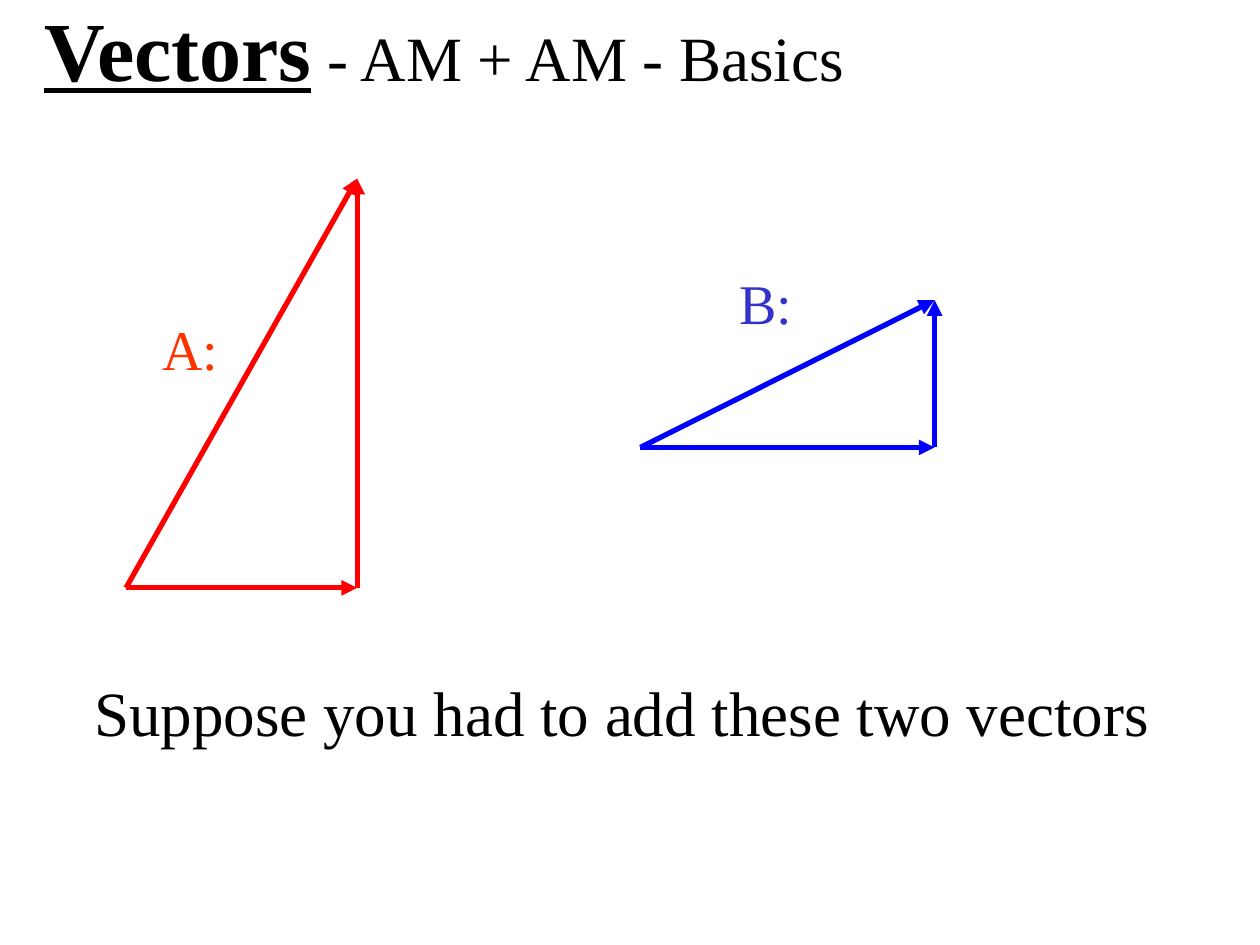
import pptx
import pptx.dml.color
import pptx.enum.shapes
import pptx.enum.text
import pptx.oxml.ns
import pptx.util
import lxml.etree
from pptx.util import Cm


def colour(hex_text):
    return pptx.dml.color.RGBColor.from_string(hex_text)


class VectorDeck:
    """Hold the style and current slide, and draw text and vectors on it."""

    font = "Times New Roman"
    line_width = 3

    def __init__(self, width, height):
        self.deck = pptx.Presentation()
        self.deck.slide_width, self.deck.slide_height = Cm(width), Cm(height)
        self.page = self.deck.slides.add_slide(self.deck.slide_layouts[6])

    def text(self, left, top, width, height, *spans):
        box = self.page.shapes.add_textbox(Cm(left), Cm(top), Cm(width), Cm(height))
        box.text_frame.word_wrap = False
        box.text_frame.auto_size = pptx.enum.text.MSO_AUTO_SIZE.SHAPE_TO_FIT_TEXT
        para = box.text_frame.paragraphs[0]
        for words, size, ink, strong in spans:
            span = para.add_run()
            span.text = words
            span.font.name = self.font
            span.font.size = pptx.util.Pt(size)
            span.font.bold = span.font.underline = strong
            span.font.color.rgb = colour(ink)

    def arrow(self, start, end, ink):
        arrow = self.page.shapes.add_connector(
            pptx.enum.shapes.MSO_CONNECTOR.STRAIGHT, *map(Cm, start + end))
        arrow.line.color.rgb = colour(ink)
        arrow.line.width = pptx.util.Pt(self.line_width)
        qn = pptx.oxml.ns.qn
        properties = arrow.element.find(qn("p:spPr"))
        outline = properties.find(qn("a:ln"))
        lxml.etree.SubElement(outline, qn("a:tailEnd"), type="triangle")
        lxml.etree.SubElement(properties, qn("a:effectLst"))

    def vector(self, start, end, ink):
        corner = (end[0], start[1])
        for tail, tip in ((start, corner), (corner, end), (start, end)):
            self.arrow(tail, tip, ink)


def main():
    slide = VectorDeck(25.4, 19.05)
    slide.text(0.64, -0.18, 16.92, 2.29,
               ("Vectors", 48, "000000", True),
               (" - AM + AM - Basics", 36, "000000", False))
    slide.vector((2.54, 11.85), (7.2, 3.6), "FF0000")
    slide.text(3.02, 6.22, 1.65, 1.6, ("A:", 32, "FF3300", False))
    slide.vector((12.91, 9.02), (18.84, 6.05), "0000FF")
    slide.text(14.66, 5.28, 1.57, 1.6, ("B:", 32, "3333CC", False))
    slide.text(1.65, 13.46, 21.79, 1.78,
               ("Suppose you had to add these two vectors", 36, "000000", False))
    slide.deck.save("out.pptx")


if __name__ == "__main__":
    main()
